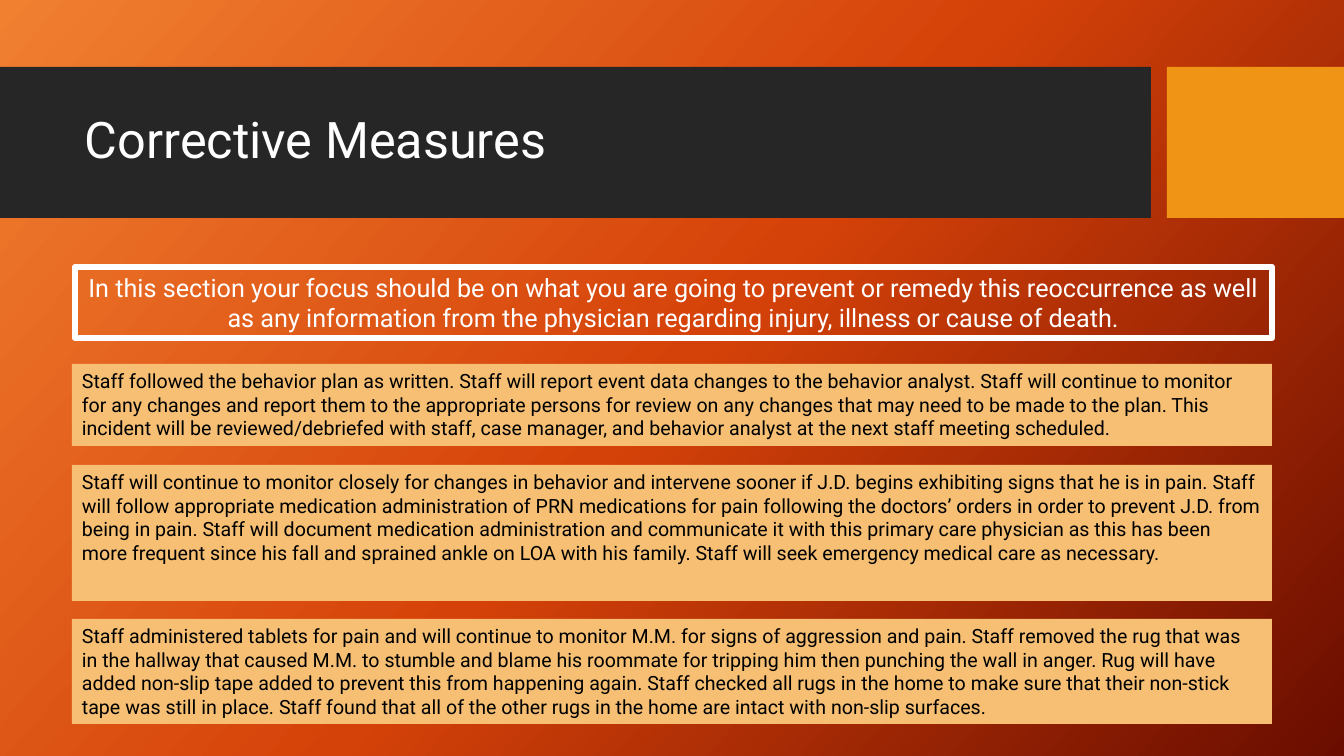
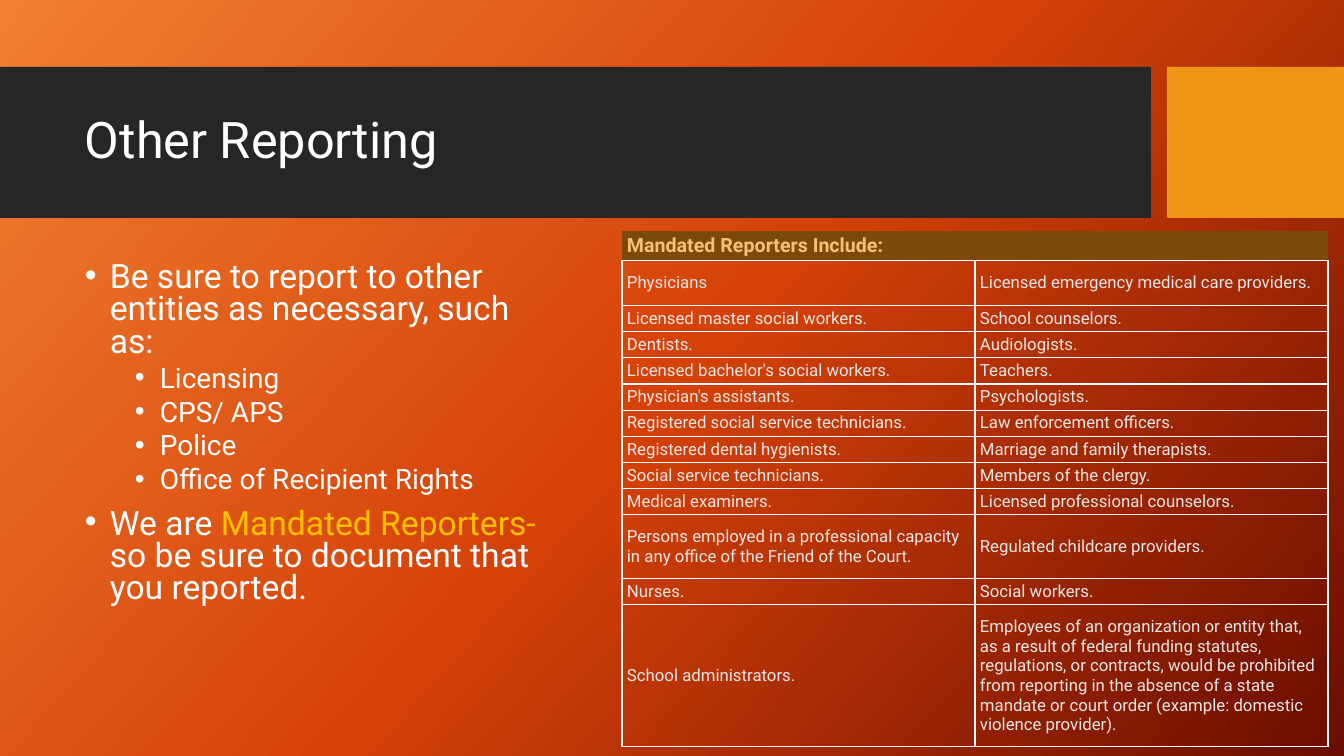
from copy import deepcopy

from lxml.etree import SubElement
from pptx import Presentation
from pptx.dml.color import RGBColor
from pptx.enum.shapes import MSO_SHAPE as Shape
from pptx.enum.text import MSO_ANCHOR as Anchor, PP_ALIGN as Align
from pptx.oxml import parse_xml
from pptx.oxml.ns import nsdecls, qn
from pptx.util import Emu, Pt

EMU_PER_PX = 914400 / 100.8
FONT = "Roboto"
COLORS = {
    "glow": "F18031", "flame": "D54209", "ember": "6A0D00",
    "band": "262626", "accent": "F09415", "panel": "F6BF73",
    "header": "7B4A08", "highlight": "FFC000", "cell": "E7E6E6",
    "white": "FFFFFF", "black": "000000",
}

MEASURES_FOCUS = (
    "In this section your focus should be on what you are going to prevent or remedy this "
    "reoccurrence as well as any information from the physician regarding injury, illness or "
    "cause of death."
)
# top, height, text
MEASURES = [
    (364, 82,
     "Staff followed the behavior plan as written. Staff will report event data changes to the "
     "behavior analyst. Staff will continue to monitor for any changes and report them to the "
     "appropriate persons for review on any changes that may need to be made to the plan. This "
     "incident will be reviewed/debriefed with staff, case manager, and behavior analyst at the "
     "next staff meeting scheduled."),
    (465, 136,
     "Staff will continue to monitor closely for changes in behavior and intervene sooner if "
     "J.D. begins exhibiting signs that he is in pain. Staff will follow appropriate medication "
     "administration of PRN medications for pain following the doctors’ orders in order to "
     "prevent J.D. from being in pain. Staff will document medication administration and "
     "communicate it with this primary care physician as this has been more frequent since his "
     "fall and sprained ankle on LOA with his family. Staff will seek emergency medical care as "
     "necessary."),
    (619, 105,
     "Staff administered tablets for pain and will continue to monitor M.M. for signs of "
     "aggression and pain. Staff removed the rug that was in the hallway that caused M.M. to "
     "stumble and blame his roommate for tripping him then punching the wall in anger. Rug will "
     "have added non-slip tape added to prevent this from happening again. Staff checked all "
     "rugs in the home to make sure that their non-stick tape was still in place. Staff found "
     "that all of the other rugs in the home are intact with non-slip surfaces."),
]
# level, runs of (text, color)
REPORTING = [
    (0, [("Be sure to report to other entities as necessary, such as:", "white")]),
    (1, [("Licensing", "white")]),
    (1, [("CPS/ APS", "white")]),
    (1, [("Police", "white")]),
    (1, [("Office of Recipient Rights", "white")]),
    (0, [("We are ", "white"), ("Mandated Reporters- ", "highlight"),
         ("so be sure to document that you reported.", "white")]),
]
# row height, left cell, right cell
REPORTERS = [
    (45, "Physicians", "Licensed emergency medical care providers."),
    (25, "Licensed master social workers.", "School counselors."),
    (25, "Dentists.", "Audiologists."),
    (25, "Licensed bachelor's social workers.", "Teachers."),
    (25, "Physician's assistants.", "Psychologists."),
    (25, "Registered social service technicians.", "Law enforcement officers."),
    (25, "Registered dental hygienists.", "Marriage and family therapists."),
    (25, "Social service technicians.", "Members of the clergy."),
    (25, "Medical examiners.", "Licensed professional counselors."),
    (64, "Persons employed in a professional capacity in any office of the Friend of the Court.",
     "Regulated childcare providers."),
    (25, "Nurses.", "Social workers."),
    (142, "School administrators.",
     "Employees of an organization or entity that, as a result of federal funding statutes, "
     "regulations, or contracts, would be prohibited from reporting in the absence of a state "
     "mandate or court order (example: domestic violence provider)."),
]


def px(length):
    return Emu(round(length * EMU_PER_PX))


def rgb(color):
    return RGBColor.from_string(COLORS[color])


def write(paragraph, text, size=14, color="white", bold=False, align=None):
    """Append a formatted run to a paragraph."""
    run = paragraph.add_run()
    run.text = text
    run.font.name = FONT
    run.font.size = Pt(size)
    run.font.bold = bold
    run.font.color.rgb = rgb(color)
    if align is not None:
        paragraph.alignment = align


def add_bullet(paragraph, margin, hang):
    properties = paragraph._p.get_or_add_pPr()
    properties.set("marL", str(px(margin)))
    properties.set("indent", str(-px(hang)))
    SubElement(properties, qn("a:buFont")).set("typeface", "Arial")
    SubElement(properties, qn("a:buChar")).set("char", "•")


def set_borders(cell, sides):
    """Draw thin white lines on the named sides (L, R, T, B) and clear the others."""
    for index, side in enumerate("LRTB"):
        paint = (f'<a:solidFill><a:srgbClr val="{COLORS["white"]}"/></a:solidFill>'
                 if side in sides else "<a:noFill/>")
        border = parse_xml(f'<a:ln{side} {nsdecls("a")} w="{Pt(1)}">{paint}</a:ln{side}>')
        cell._tc.get_or_add_tcPr().insert(index, border)


class Deck:
    def __init__(self):
        self.prs = Presentation()
        self.prs.slide_width, self.prs.slide_height = px(1344), px(756)
        self.slide = None
        self.paint_background()

    def paint_background(self):
        fill = self.prs.slide_master.background.fill
        fill.gradient()
        fill.gradient_angle = 360 - 42
        first = fill._xPr.find(qn("a:gradFill")).find(qn("a:gsLst"))[0]
        first.addnext(deepcopy(first))
        for stop, (position, color) in zip(
                fill.gradient_stops, [(0, "glow"), (0.5, "flame"), (1, "ember")]):
            stop.position = position
            stop.color.rgb = rgb(color)

    def add_slide(self, title):
        self.slide = self.prs.slides.add_slide(self.prs.slide_layouts[6])
        self.band(0, 67, 1151, 151, "band")
        self.band(1167, 67, 177, 151, "accent")
        frame = self.box(75, 83, 1059, 119).text_frame
        frame.vertical_anchor = Anchor.MIDDLE
        frame.paragraphs[0].line_spacing = 0.9
        write(frame.paragraphs[0], title, size=36)

    def band(self, left, top, width, height, color):
        band = self.slide.shapes.add_shape(
            Shape.RECTANGLE, px(left), px(top), px(width), px(height))
        band.shadow.inherit = False
        band.fill.solid()
        band.fill.fore_color.rgb = rgb(color)
        band.line.fill.background()

    def box(self, left, top, width, height, fill=None, outline=None):
        """Add an empty wrapping text box."""
        box = self.slide.shapes.add_textbox(px(left), px(top), px(width), px(height))
        box.text_frame.word_wrap = True
        if fill:
            box.fill.solid()
            box.fill.fore_color.rgb = rgb(fill)
        if outline:
            box.line.color.rgb = rgb(outline)
            box.line.width = Pt(4.5)
        return box

    def bullets(self, left, top, width, height, items):
        frame = self.box(left, top, width, height).text_frame
        for index, (level, runs) in enumerate(items):
            paragraph = frame.paragraphs[0] if index == 0 else frame.add_paragraph()
            paragraph.level = level
            paragraph.line_spacing = 0.8
            paragraph.space_before = Pt((10, 5)[level] if index else 0)
            add_bullet(paragraph, margin=(25, 75)[level], hang=25)
            for text, color in runs:
                write(paragraph, text, size=(24, 20)[level], color=color)

    def table(self, left, top, width, heading, rows):
        heights = [27] + [height for height, *_ in rows]
        table = self.slide.shapes.add_table(
            len(heights), 2, px(left), px(top), px(width), px(sum(heights))).table
        table.first_row = table.horz_banding = False
        for row, height in zip(table.rows, heights):
            row.height = px(height)
        for column in range(2):
            header = table.cell(0, column)
            header.fill.solid()
            header.fill.fore_color.rgb = rgb("header")
            self.cell(header, heading if column == 0 else "", "B",
                      size=14, color="panel", bold=True)
        table.cell(0, 0).merge(table.cell(0, 1))
        for index, (_, *texts) in enumerate(rows, start=1):
            for column, text in enumerate(texts):
                cell = table.cell(index, column)
                cell.fill.background()
                self.cell(cell, text, "LRTB", size=12, color="cell")

    def cell(self, cell, text, borders, **style):
        cell.margin_left = cell.margin_right = px(5)
        cell.margin_top = cell.margin_bottom = px(3)
        cell.vertical_anchor = Anchor.MIDDLE
        set_borders(cell, borders)
        if text:
            write(cell.text_frame.paragraphs[0], text, **style)


def main():
    deck = Deck()

    deck.add_slide("Corrective Measures")
    focus = deck.box(75, 267, 1197, 71, outline="white")
    write(focus.text_frame.paragraphs[0], MEASURES_FOCUS, size=18, align=Align.CENTER)
    for top, height, text in MEASURES:
        measure = deck.box(72, top, 1200, height, fill="panel")
        write(measure.text_frame.paragraphs[0], text, color="black")

    deck.add_slide("Other Reporting")
    deck.bullets(75, 258, 472, 397, REPORTING)
    deck.table(622, 231, 706, "Mandated Reporters Include:", REPORTERS)

    deck.prs.save("out.pptx")


if __name__ == "__main__":
    main()
